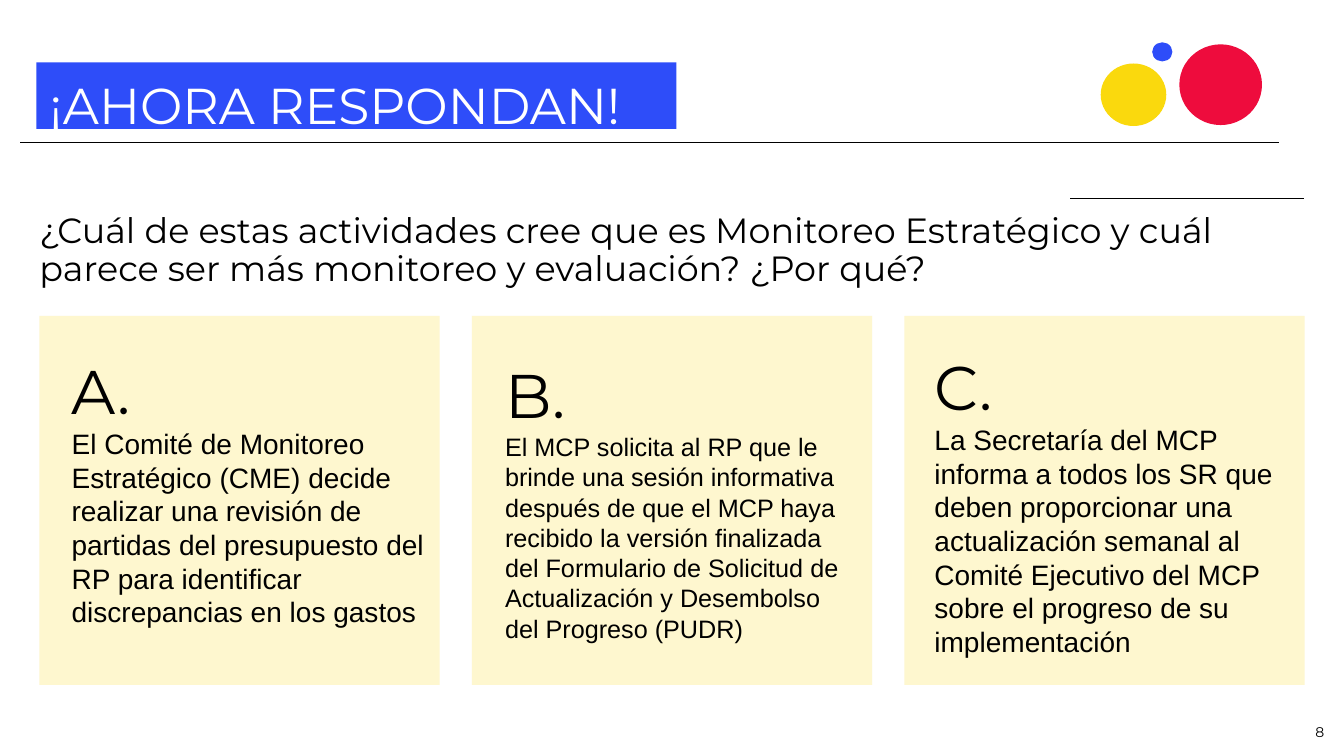
from lxml.etree import SubElement
from pptx import Presentation
from pptx.dml.color import RGBColor
from pptx.enum.shapes import MSO_CONNECTOR, MSO_SHAPE
from pptx.enum.text import MSO_ANCHOR, PP_ALIGN
from pptx.oxml.ns import qn
from pptx.util import Inches, Pt

BLACK = RGBColor(0x00, 0x00, 0x00)
WHITE = RGBColor(0xFF, 0xFF, 0xFF)
BLUE = RGBColor(0x2E, 0x4D, 0xF9)
YELLOW = RGBColor(0xFA, 0xD9, 0x0D)
RED = RGBColor(0xEE, 0x0C, 0x3D)
CREAM = RGBColor(0xFE, 0xF7, 0xCF)

HEADING_FONT = "Montserrat"
BODY_FONT = "Arial"
CARD_INSETS = (0.15, 0.15, 0.15, 0.15)
DEFAULT_INSETS = (0.1, 0.05, 0.1, 0.05)
NO_INSETS = (0, 0, 0, 0)


class SlideBuilder:
    """Places elements on one slide; all lengths are percentages of its size."""

    def __init__(self, deck):
        self.width, self.height = deck.slide_width, deck.slide_height
        self.slide = deck.slides.add_slide(deck.slide_layouts[6])

    def scale(self, x, y):
        return int(self.width * x / 100), int(self.height * y / 100)

    def box(self, left, top, width, height):
        return *self.scale(left, top), *self.scale(width, height)

    def shape(self, preset, place, color, parent=None):
        shapes = (parent or self.slide).shapes
        figure = shapes.add_shape(preset, *self.box(*place))
        figure.shadow.inherit = False
        figure.fill.solid()
        figure.fill.fore_color.rgb = color
        figure.line.fill.background()
        return figure

    def rule(self, left, right, y):
        line = self.slide.shapes.add_connector(
            MSO_CONNECTOR.STRAIGHT, *self.scale(left, y), *self.scale(right, y))
        line.line.color.rgb = BLACK
        line.line.width = Pt(0.5)
        SubElement(line._element.spPr, qn("a:effectLst"))

    def fill_text(self, frame, lines, insets, color=BLACK, anchor=MSO_ANCHOR.TOP, spacing=1.0):
        """Fill a text frame with lines of (text, font name, size)."""
        left, top, right, bottom = map(Inches, insets)
        layout = {"word_wrap": True, "vertical_anchor": anchor, "margin_left": left,
                  "margin_top": top, "margin_right": right, "margin_bottom": bottom}
        for name, value in layout.items():
            setattr(frame, name, value)
        for index, (text, font, size) in enumerate(lines):
            paragraph = frame.add_paragraph() if index else frame.paragraphs[0]
            paragraph.alignment = PP_ALIGN.LEFT
            paragraph.line_spacing = spacing
            run = paragraph.add_run()
            run.text = text
            for name, value in {"name": font, "size": Pt(size)}.items():
                setattr(run.font, name, value)
            run.font.color.rgb = color

    def text(self, place, lines, insets=DEFAULT_INSETS, **style):
        frame = self.slide.shapes.add_textbox(*self.box(*place)).text_frame
        self.fill_text(frame, lines, insets, **style)


def letter(text):
    return text, HEADING_FONT, 44


def main():
    deck = Presentation()
    deck.slide_width, deck.slide_height = Inches(13.33), Inches(7.5)
    page = SlideBuilder(deck)

    page.rule(79.65, 97.05, 26.27)
    for column in range(3):
        page.shape(MSO_SHAPE.RECTANGLE, (2.93 + 32.18 * column, 41.8, 29.78, 48.8), CREAM)

    activities = [
        ((4.2, 44.67, 29.78, 17.87), CARD_INSETS, [
            letter("A."),
            ("El Comité de Monitoreo Estratégico (CME) decide realizar una revisión de "
             "partidas del presupuesto del RP para identificar discrepancias en los gastos",
             BODY_FONT, 20)]),
        ((36.9, 46.53, 26.18, 11.2), DEFAULT_INSETS, [letter("B.")]),
        ((36.45, 55.07, 27.08, 22), CARD_INSETS, [
            ("El MCP solicita al RP que le brinde una sesión informativa después de que "
             "el MCP haya recibido la versión finalizada del Formulario de Solicitud de "
             "Actualización y Desembolso del Progreso (PUDR)", BODY_FONT, 18)]),
        ((68.4, 44.13, 29.85, 18.67), CARD_INSETS, [
            letter("C."),
            ("La Secretaría del MCP informa a todos los SR que deben proporcionar una "
             "actualización semanal al Comité Ejecutivo del MCP sobre el progreso de su "
             "implementación", BODY_FONT, 20)]),
    ]
    for place, insets, lines in activities:
        page.text(place, lines, insets)

    page.rule(1.5, 95.18, 18.8)
    page.text((97.13, 95.07, 2.25, 5.33), [("8", HEADING_FONT, 10)])
    question = ("¿Cuál de estas actividades cree que es Monitoreo Estratégico y cuál "
                "parece ser más monitoreo y evaluación? ¿Por qué?")
    page.text((2.93, 27.6, 94.13, 11.33), [(question, HEADING_FONT, 25)], NO_INSETS,
              anchor=MSO_ANCHOR.MIDDLE, spacing=0.9)

    banner = page.shape(MSO_SHAPE.RECTANGLE, (2.7, 8.27, 47.63, 8.8), BLUE)
    page.fill_text(banner.text_frame, [("¡AHORA RESPONDAN!", HEADING_FONT, 36)],
                   (0.13, 0.18, 0, 0), color=WHITE, spacing=0.9)

    dots = page.slide.shapes.add_group_shape()
    for place, color in [((81.9, 8.4, 4.88, 8.27), YELLOW),
                         ((87.75, 5.87, 6.15, 10.67), RED),
                         ((85.73, 5.6, 1.5, 2.53), BLUE)]:
        page.shape(MSO_SHAPE.OVAL, place, color, dots)

    deck.save("out.pptx")


if __name__ == "__main__":
    main()
